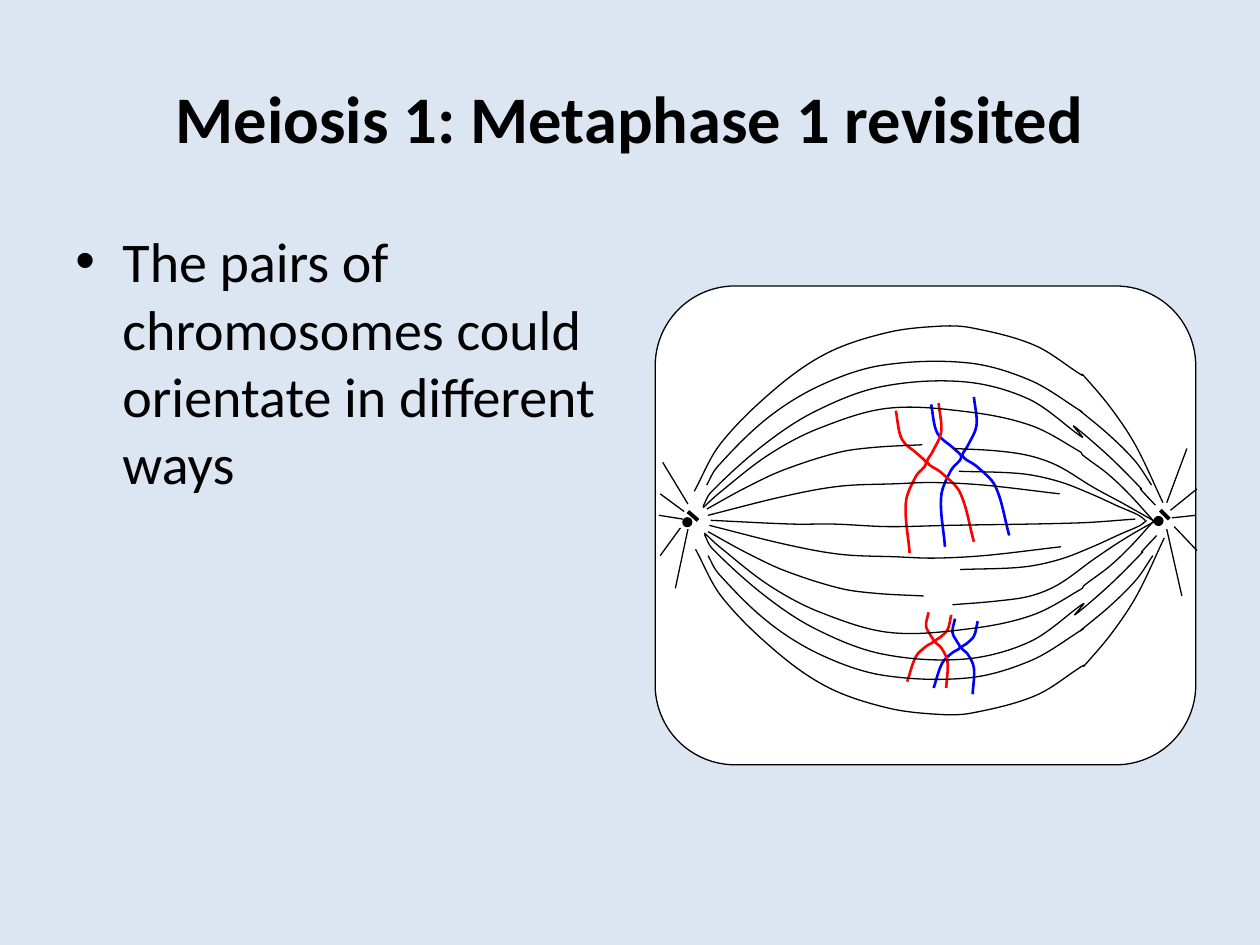
from dataclasses import dataclass
from math import dist

from lxml.etree import SubElement
from pptx import Presentation
from pptx.dml.color import RGBColor as RGB
from pptx.enum.shapes import MSO_CONNECTOR as CONN, MSO_SHAPE as SHAPE
from pptx.enum.text import MSO_ANCHOR as ANCHOR, PP_ALIGN as ALIGN
from pptx.oxml.ns import qn
from pptx.util import Cm, Pt


@dataclass(frozen=True)
class Theme:
    font: str = "Calibri"
    title: float = 38
    body: float = 32
    thin: float = 0.75
    chromatid: float = 1.5
    centriole: float = 2.25
    background: RGB = RGB(0xDC, 0xE6, 0xF2)
    ink: RGB = RGB(0, 0, 0)
    cell: RGB = RGB(255, 255, 255)
    red: RGB = RGB(255, 0, 0)
    blue: RGB = RGB(0, 0, 255)


THEME = Theme()
GRID = 0.0254
MIRROR = 826

LONG_PAIR = [
    [(773, 315), (775, 338), (768, 354), (764, 362), (775, 370), (790, 386), (801, 425)],
    [(739, 321), (744, 344), (757, 356), (763, 363), (755, 373), (747, 394), (750, 434)],
]
SHORT_PAIR = [
    [(758, 491), (756, 502), (760, 510), (762, 514), (756, 518), (748, 526), (741, 546)],
    [(776, 493), (773, 505), (767, 511), (763, 514), (768, 519), (773, 530), (772, 551)],
]
CHROMOSOMES = [
    (LONG_PAIR, 0, 0, THEME.blue),
    (LONG_PAIR, -28, 5, THEME.red),
    (SHORT_PAIR, 0, 0, THEME.blue),
    (SHORT_PAIR, -21, -5, THEME.red),
]

UPPER_FIBRES = [
    [(551, 390), (572, 352), (616, 308), (657, 280), (704, 264), (744, 259), (770, 260),
     (821, 274), (859, 298), (859, 297), (881, 323), (901, 353), (923, 399)],
    [(561, 385), (569, 371), (609, 332), (651, 306), (700, 290), (768, 288), (818, 302),
     (859, 327), (856, 325), (880, 345), (901, 366), (914, 385)],
    [(558, 402), (564, 391), (605, 354), (646, 327), (699, 307), (765, 303), (817, 317),
     (859, 347), (852, 338), (880, 362), (906, 388), (905, 388), (917, 401)],
    [(558, 403), (570, 392), (610, 361), (650, 340), (705, 324), (769, 327), (819, 338),
     (858, 359), (859, 361), (879, 376), (896, 392), (916, 414)],
    [(561, 404), (592, 387), (622, 373), (666, 359), (695, 355), (732, 353)],
    [(562, 409), (622, 394), (666, 386), (711, 384), (740, 383), (780, 385), (841, 392)],
    [(761, 374), (811, 376), (840, 382), (866, 392), (888, 402), (904, 409), (909, 413)],
]
SINGLE_FIBRES = [
    [(757, 356), (792, 358), (818, 362), (840, 370), (868, 387), (892, 400), (915, 413)],
    [(756, 480), (792, 477), (818, 473), (840, 464), (868, 444), (892, 428), (916, 414)],
    [(564, 413), (629, 416), (662, 416), (705, 418), (754, 417), (857, 415), (901, 412)],
]

LEFT_ASTER = [
    (546, 400, 526, 367), (543, 406, 524, 392), (542, 412, 523, 409),
    (524, 441, 540, 419), (546, 420, 536, 467),
]
RIGHT_ASTER = [
    (926, 399, 942, 356), (929, 405, 950, 388), (930, 411, 949, 409),
    (950, 437, 932, 418), (926, 420, 938, 473),
]
POLES = [
    (LEFT_ASTER, (546, 406, 554, 413), (542, 411)),
    (RIGHT_ASTER, (921, 405, 928, 412), (916, 410)),
]


def grid(value):
    return Cm(value * GRID)


def shift(points, dx, dy):
    return [(x + dx, y + dy) for x, y in points]


def mirror(points):
    return [(x + 1, MIRROR - y) for x, y in points]


def handles(points):
    ends = [points[0], *points, points[-1]]
    slopes = []
    for before, here, after in zip(ends, points, ends[2:]):
        reach = dist(before, here) + dist(here, after)
        slopes.append([(b - a) / reach for a, b in zip(before, after)])
    for a, b, m, n in zip(points, points[1:], slopes, slopes[1:]):
        third = dist(a, b) / 3
        yield ((a[0] + m[0] * third, a[1] + m[1] * third),
               (b[0] - n[0] * third, b[1] - n[1] * third))


def add_curve(s, points, color, width):
    start, *rest = [(grid(x), grid(y)) for x, y in points]
    builder = s.shapes.build_freeform(*start)
    builder.add_line_segments(rest, close=False)
    sp = builder.convert_to_shape()
    segments = list(sp._element.iter(qn("a:lnTo")))
    for segment, controls in zip(segments, handles(points)):
        segment.tag = qn("a:cubicBezTo")
        end = segment[0]
        for x, y in controls:
            SubElement(segment, qn("a:pt"), x=str(grid(x) - sp.left), y=str(grid(y) - sp.top))
        segment.append(end)
    sp.shadow.inherit = False
    sp.fill.background()
    sp.line.color.rgb = color
    sp.line.width = Pt(width)


def add_line(s, ends, width):
    cx = s.shapes.add_connector(CONN.STRAIGHT, *map(grid, ends))
    cx.line.color.rgb = THEME.ink
    cx.line.width = Pt(width)
    SubElement(cx._element.spPr, qn("a:effectLst"))


def add_preset(s, kind, box, fill):
    sp = s.shapes.add_shape(kind, *map(grid, box))
    sp.shadow.inherit = False
    sp.fill.solid()
    sp.fill.fore_color.rgb = fill
    sp.line.color.rgb = THEME.ink
    sp.line.width = Pt(THEME.thin)


def add_text(s, text, box, size, bold=False, align=ALIGN.LEFT, anchor=ANCHOR.TOP, bullet=None):
    tf = s.shapes.add_textbox(*map(Cm, box)).text_frame
    tf.word_wrap = True
    tf.vertical_anchor = anchor
    p = tf.paragraphs[0]
    p.alignment = align
    if bullet:
        pPr = p._p.get_or_add_pPr()
        pPr.set("marL", str(Cm(0.95)))
        pPr.set("indent", str(-Cm(0.95)))
        SubElement(pPr, qn("a:buFont"), typeface="Arial")
        SubElement(pPr, qn("a:buChar"), char=bullet)
    r = p.add_run()
    r.text = text
    r.font.name = THEME.font
    r.font.size = Pt(size)
    r.font.bold = bold
    r.font.color.rgb = THEME.ink


def add_pole(s, aster, centriole, corner):
    for ray in aster:
        add_line(s, ray, THEME.thin)
    add_line(s, centriole, THEME.centriole)
    add_preset(s, SHAPE.OVAL, (*corner, 7, 7), THEME.ink)


def add_cell(s):
    add_preset(s, SHAPE.ROUNDED_RECTANGLE, (520, 227, 429, 380), THEME.cell)
    for pair, dx, dy, color in CHROMOSOMES:
        for chromatid in pair:
            add_curve(s, shift(chromatid, dx, dy), color, THEME.chromatid)
    for fibre in UPPER_FIBRES + [mirror(f) for f in UPPER_FIBRES] + SINGLE_FIBRES:
        add_curve(s, fibre, THEME.ink, THEME.thin)
    for pole in POLES:
        add_pole(s, *pole)


def main():
    prs = Presentation()
    prs.slide_width, prs.slide_height = Cm(25.4), Cm(19.05)
    s = prs.slides.add_slide(prs.slide_layouts[6])
    s.background.fill.solid()
    s.background.fill.fore_color.rgb = THEME.background
    add_text(s, "Meiosis 1: Metaphase 1 revisited", (1.27, 0.76, 22.86, 3.18),
             THEME.title, bold=True, align=ALIGN.CENTER, anchor=ANCHOR.MIDDLE)
    add_text(s, "The pairs of chromosomes could orientate in different ways",
             (1.27, 4.45, 11.53, 12.57), THEME.body, bullet="•")
    add_cell(s)
    prs.save("out.pptx")


if __name__ == "__main__":
    main()
